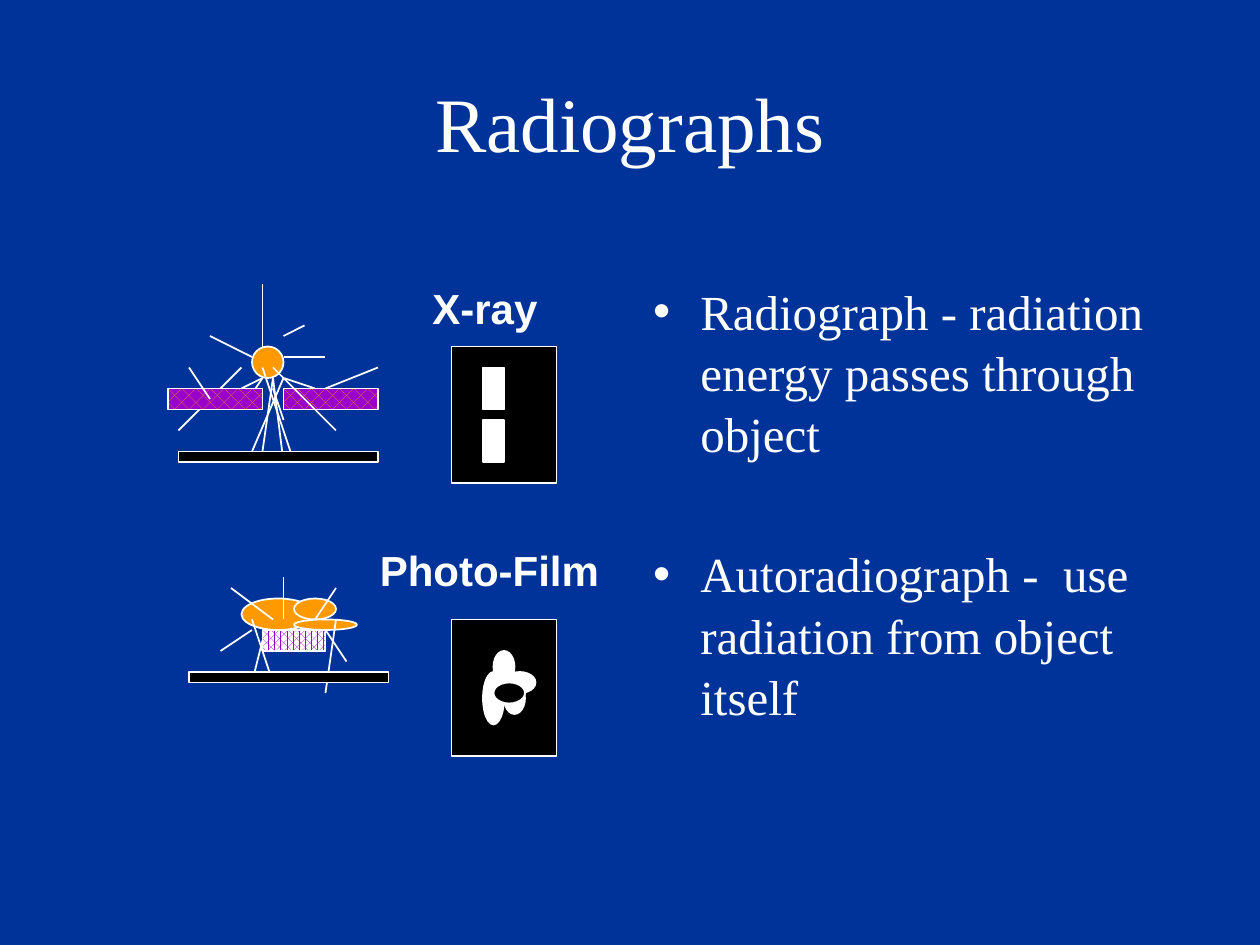
"""Build the Radiographs slide with its X-ray and photo-film diagrams."""
from lxml.etree import SubElement
from pptx import Presentation
from pptx.dml.color import RGBColor
from pptx.enum.dml import MSO_PATTERN
from pptx.enum.shapes import MSO_CONNECTOR, MSO_SHAPE
from pptx.enum.text import MSO_ANCHOR, MSO_AUTO_SIZE, PP_ALIGN
from pptx.oxml.ns import qn
from pptx.util import Pt

PX = 9525
WHITE, BLACK, ORANGE, PURPLE, BLUE = "FFFFFF", "000000", "FF9900", "9900CC", "003399"
PATTERNS = {
    "lead": (MSO_PATTERN.PERCENT_25, ORANGE, PURPLE),
    "tissue": (MSO_PATTERN.PERCENT_70, PURPLE, WHITE),
}
KINDS = {"rect": MSO_SHAPE.RECTANGLE, "oval": MSO_SHAPE.OVAL}


def rgb(value):
    return RGBColor.from_string(value)


def style(font, name, size, bold=False):
    values = {"name": name, "size": Pt(size), "bold": bold}
    for key, value in values.items():
        setattr(font, key, value)
    font.color.rgb = rgb(WHITE)


prs = Presentation()
prs.slide_width, prs.slide_height = 960 * PX, 720 * PX
s = prs.slides.add_slide(prs.slide_layouts[1])
s.background.fill.solid()
s.background.fill.fore_color.rgb = rgb(BLUE)

title, body = s.shapes.title, s.placeholders[1]
for sp, box in ((title, (72, 34, 816, 118)), (body, (488, 208, 400, 432))):
    for key, value in zip(("left", "top", "width", "height"), box):
        setattr(sp, key, value * PX)
    sp.text_frame.auto_size = MSO_AUTO_SIZE.NONE

title.text_frame.text = "Radiographs"
title.text_frame.vertical_anchor = MSO_ANCHOR.MIDDLE
p = title.text_frame.paragraphs[0]
p.alignment = PP_ALIGN.CENTER
style(p.runs[0].font, "Times New Roman", 44)

body.text_frame.text = (
    "Radiograph - radiation energy passes through object\n"
    "Autoradiograph -  use radiation from object itself"
)
for p, gap in zip(body.text_frame.paragraphs, (0, 45)):
    p.space_before, p.line_spacing = Pt(gap), 1.04
    pPr = p._p.get_or_add_pPr()
    pPr.set("marL", str(36 * PX))
    pPr.set("indent", str(-36 * PX))
    SubElement(pPr, qn("a:buChar"), char="•")
    style(p.runs[0].font, "Times New Roman", 28)

pieces = [
    ("oval", ORANGE, [(192, 264, 24, 24)]),
    ("line", WHITE, [
        (216, 256, 232, 248), (216, 272, 248, 272), (208, 296, 216, 320),
        (184, 280, 168, 296), (192, 272, 160, 256), (200, 264, 200, 216),
        (200, 288, 184, 312), (216, 288, 240, 296),
    ]),
    ("rect", "lead", [(128, 296, 72, 16), (216, 296, 72, 16)]),
    ("line", WHITE, [
        (208, 288, 216, 352), (208, 288, 200, 344), (200, 288, 184, 296),
        (248, 296, 288, 280), (160, 304, 144, 280), (152, 312, 136, 328),
        (208, 280, 256, 328), (200, 280, 224, 352), (216, 288, 192, 344),
    ]),
    ("rect", BLACK, [(136, 344, 152, 8), (344, 264, 80, 104)]),
    ("rect", WHITE, [(368, 280, 16, 32), (368, 320, 16, 32)]),
    ("oval", ORANGE, [(184, 456, 56, 24), (224, 456, 32, 16), (224, 472, 48, 8)]),
    ("rect", "tissue", [(200, 480, 48, 16)]),
    ("line", WHITE, [
        (208, 472, 176, 448), (216, 472, 216, 440), (192, 480, 168, 496),
        (248, 480, 264, 504), (200, 488, 192, 520), (256, 472, 248, 528),
        (192, 472, 208, 520), (240, 472, 256, 448),
    ]),
    ("rect", BLACK, [(144, 512, 152, 8), (344, 472, 80, 104)]),
    ("oval", WHITE, [
        (376, 496, 16, 24), (384, 512, 24, 16), (368, 512, 16, 40), (384, 520, 16, 24),
    ]),
    ("oval", BLACK, [(376, 520, 24, 16)]),
]
for kind, paint, boxes in pieces:
    for box in boxes:
        at = [n * PX for n in box]
        if kind == "line":
            sp = s.shapes.add_connector(MSO_CONNECTOR.STRAIGHT, *at)
            SubElement(sp._element.spPr, qn("a:ln"))
            SubElement(sp._element.spPr, qn("a:effectLst"))
        else:
            sp = s.shapes.add_shape(KINDS[kind], *at)
            sp.shadow.inherit = False
            if paint in PATTERNS:
                pattern, fore, back = PATTERNS[paint]
                sp.fill.patterned()
                sp.fill.pattern = pattern
                sp.fill.fore_color.rgb = rgb(fore)
                sp.fill.back_color.rgb = rgb(back)
            else:
                sp.fill.solid()
                sp.fill.fore_color.rgb = rgb(paint)
        sp.line.color.rgb = rgb(WHITE)
        sp.line.width = Pt(1)

for label, box in (("X-ray", (320, 208, 104, 48)), ("Photo-Film", (280, 408, 200, 48))):
    tf = s.shapes.add_textbox(*[n * PX for n in box]).text_frame
    tf.word_wrap = True
    tf.margin_top = 7 * PX
    r = tf.paragraphs[0].add_run()
    r.text = label
    style(r.font, "Arial", 24, bold=True)

prs.save("out.pptx")
